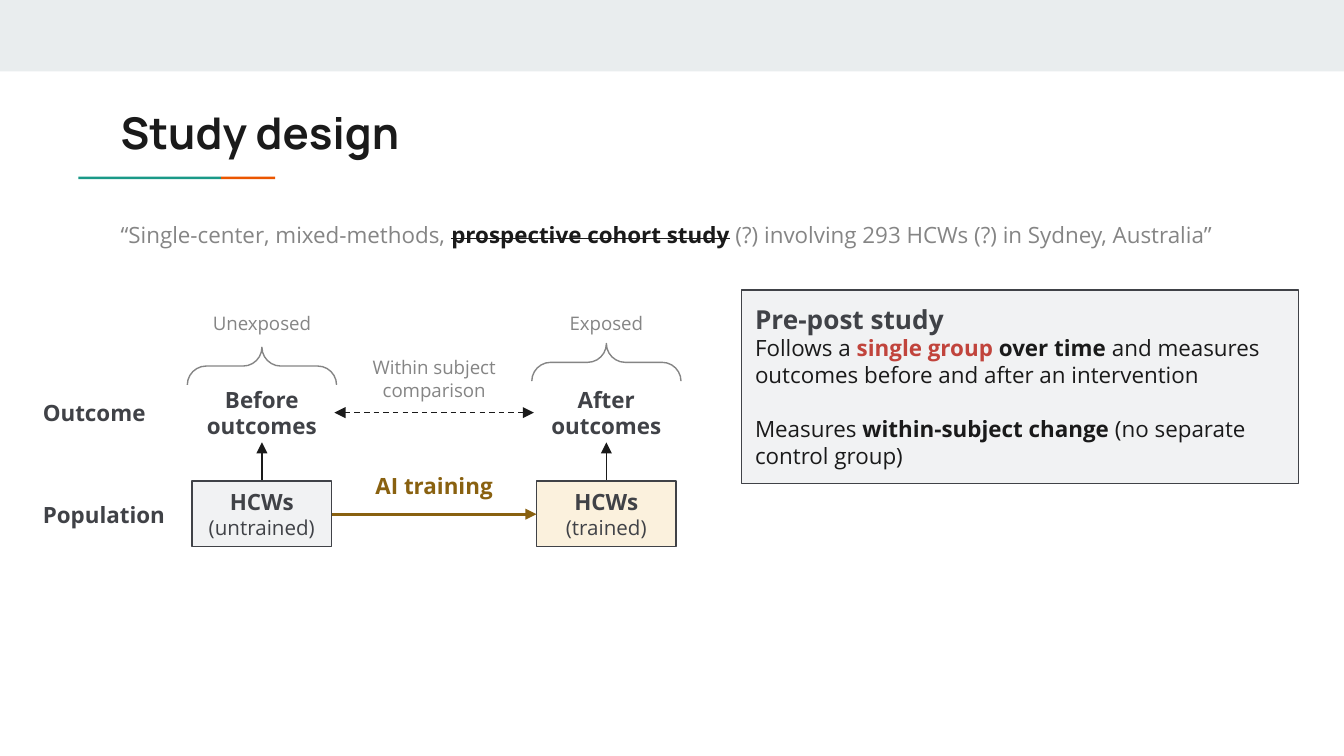
from lxml import etree
from pptx import Presentation
from pptx import util as u
from pptx.dml.color import RGBColor
from pptx.enum import dml, shapes, text
from pptx.oxml import ns

Cm, Pt = u.Cm, u.Pt
INK, DARK, GREY, GOLD = "1A1A1A", "404247", "858585", "896110"
PALE, CREAM, RED = "F1F2F3", "FBF1DD", "C1443C"
KIND = shapes.MSO_SHAPE
MID, LOW, TOP = (text.MSO_ANCHOR.MIDDLE, text.MSO_ANCHOR.BOTTOM,
                 text.MSO_ANCHOR.TOP)
LEFT, MIDDLE = text.PP_ALIGN.LEFT, text.PP_ALIGN.CENTER


def color(code):
    return RGBColor.from_string(code)


def shape(slide, box, kind=KIND.RECTANGLE, fill=None, line=None):
    item = slide.shapes.add_shape(kind, *map(Cm, box))
    item.shadow.inherit = False
    if fill:
        item.fill.solid()
        item.fill.fore_color.rgb = color(fill)
    else:
        item.fill.background()
    if line:
        item.line.color.rgb = color(line)
        item.line.width = Pt(0.75)
    else:
        item.line.fill.background()
    return item


def write(slide, box, paras, item=None, size=12, ink=DARK, bold=False,
          font="Open Sans", align=LEFT, anchor=TOP, gaps=(), lead=None):
    """Paragraphs are strings or lists of (text, format) runs."""
    item = item or slide.shapes.add_textbox(*map(Cm, box))
    frame = item.text_frame
    frame.word_wrap, frame.vertical_anchor = True, anchor
    frame.margin_left = frame.margin_right = Cm(0.25)
    frame.margin_top = frame.margin_bottom = Cm(0.25)
    for i, runs in enumerate([paras] if isinstance(paras, str) else paras):
        para = frame.add_paragraph() if i else frame.paragraphs[0]
        para.alignment = align
        if lead:
            para.line_spacing = lead
        if i < len(gaps):
            para.space_before = Pt(gaps[i])
        for words, form in [(runs, {})] if isinstance(runs, str) else runs:
            run = para.add_run()
            run.text = words
            run.font.name = font
            run.font.size = Pt(form.get("size", size))
            run.font.bold = form.get("bold", bold)
            run.font.color.rgb = color(form.get("ink", ink))
            if form.get("strike"):
                run._r.get_or_add_rPr().set("strike", "sngStrike")


def arrow(slide, start, end, ink=INK, width=0.75, both=False):
    line = slide.shapes.add_connector(
        shapes.MSO_CONNECTOR.STRAIGHT, *map(Cm, start + end))
    line.line.color.rgb = color(ink)
    line.line.width = Pt(width)
    if both:
        line.line.dash_style = dml.MSO_LINE.DASH
    pen = line.line._get_or_add_ln()
    for tag in ("a:headEnd", "a:tailEnd") if both else ("a:tailEnd",):
        etree.SubElement(pen, ns.qn(tag), type="triangle")
    etree.SubElement(line._element.spPr, ns.qn("a:effectLst"))


def header(slide, x, y, w):
    # Top band, title and two-tone rule
    shape(slide, (0, 0, 25.4, 1.35), fill="E9EDEE")
    write(slide, (x, y, w, 1.5), "Study design", size=23.4, ink=INK,
          bold=True, font="Manrope")
    shape(slide, (x - 0.55, y + 1.59, 2.7, 0.05), fill="1A9988")
    shape(slide, (x + 2.15, y + 1.59, 1.02, 0.05), fill="EB5600")


def quote(slide, box):
    write(slide, box, [[
        ("“Single-center, mixed-methods, ", {}),
        ("prospective cohort study",
         {"ink": INK, "bold": True, "strike": True}),
        (" (?) involving 293 HCWs (?) in Sydney, Australia”", {})]],
        ink=GREY, lead=1.15)


def stage(slide, x, y, name, result, state, fill, dip):
    # Exposure label, brace, outcome, arrow and group box
    w, h, base = 2.64, 1.24, y + 3.68
    mid = x + w / 2
    write(slide, (x - 0.19, y, w + 0.38, 1.12), name, size=10, ink=GREY,
          align=MIDDLE, anchor=LOW)
    thick, span = 0.71, 2.82
    brace = shape(slide, (mid - thick / 2, y + dip - span / 2, thick, span),
                  KIND.LEFT_BRACE, line=GREY)
    brace.rotation = 90
    brace.adjustments[0] = brace.adjustments[1] = 0.5
    write(slide, (x - 0.05, y + 1.83, w + 0.1, 1.12), result, bold=True,
          align=MIDDLE, anchor=MID)
    arrow(slide, (mid, base), (mid, y + 2.95))
    box = (x, base, w, h)
    write(slide, box, [[("HCWs", {"bold": True})], [(state, {"size": 11})]],
          item=shape(slide, box, fill=fill, line=DARK),
          align=MIDDLE, anchor=MID)


def design(slide, x, y):
    # Row names
    for name, drop in (("Outcome", 1.83), ("Population", 3.76)):
        write(slide, (x, y + drop, 3.02, 1.12), name, bold=True, anchor=MID)
    # Two stages
    first, step, w = x + 3.07, 6.51, 2.64
    stage(slide, first, y, "Unexposed", "Before outcomes", "(untrained)",
          PALE, 1.51)
    stage(slide, first + step, y, "Exposed", "After outcomes", "(trained)",
          CREAM, 1.44)
    # Links between the stages
    start, end = first + w, first + step
    arrow(slide, (start, y + 4.31), (end, y + 4.31), GOLD, 1.5)
    arrow(slide, (start + 0.05, y + 2.39), (end - 0.05, y + 2.39), both=True)
    for words, drop, form in (
            ("AI training", 3.2, {"ink": GOLD, "bold": True}),
            ("Within subject comparison", 1.19, {"ink": GREY, "size": 10})):
        write(slide, (start, y + drop, end - start, 1.12), words,
              align=MIDDLE, anchor=MID, **form)


def panel(slide, box):
    # Definition of the study type
    strong = {"bold": True}
    write(slide, box, [
        [("Pre-post study", {"size": 14, "ink": DARK, "bold": True})],
        [("Follows a ", {}),
         ("single group ", {"ink": RED, "bold": True}),
         ("over time ", strong),
         ("and measures outcomes before and after an intervention", {})],
        [("Measures ", {}), ("within-subject change", strong),
         (" (no separate control group)", {})]],
        item=shape(slide, box, fill=PALE, line=DARK), ink=INK,
        gaps=(0, 0, 14.3))


def main():
    deck = Presentation()
    deck.slide_width, deck.slide_height = Cm(25.4), Cm(14.29)
    slide = deck.slides.add_slide(deck.slide_layouts[6])
    header(slide, 2.03, 1.75, 21.36)
    quote(slide, (2.03, 3.86, 21.36, 1.12))
    design(slide, 0.56, 5.41)
    panel(slide, (14.02, 5.48, 10.52, 3.66))
    deck.save("out.pptx")


if __name__ == "__main__":
    main()
